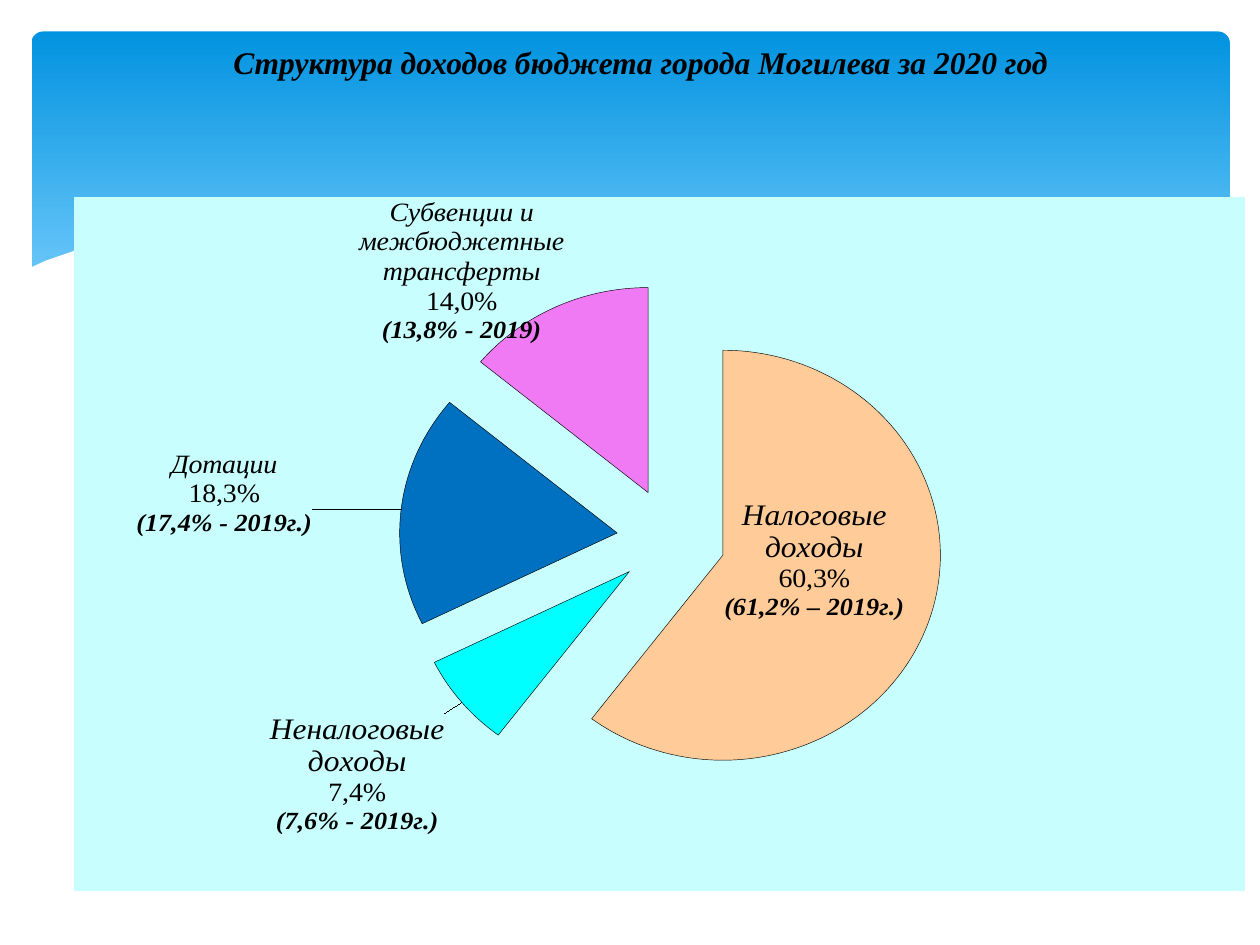
from dataclasses import dataclass

from lxml.etree import SubElement
from pptx import Presentation
from pptx.chart.data import CategoryChartData
from pptx.dml.color import RGBColor
from pptx.enum.chart import XL_CHART_TYPE, XL_LABEL_POSITION
from pptx.enum.shapes import MSO_SHAPE
from pptx.enum.text import MSO_ANCHOR, PP_ALIGN
from pptx.oxml import parse_xml
from pptx.oxml.ns import nsdecls, qn
from pptx.util import Inches, Pt


@dataclass(frozen=True)
class Theme:
    font: str = "Times New Roman"
    chart_font: str = "Calibri"
    ink: str = "000000"
    paper: str = "FFFFFF"
    banner_top: str = "0293E0"
    banner_bottom: str = "83D3FE"
    panel: str = "C8FEFD"
    title_size: int = 18
    large_size: int = 18
    label_size: int = 16
    previous_size: int = 15
    chart_size: int = 10
    line_width: float = 0.75
    slice_line_width: float = 0.25


@dataclass(frozen=True)
class Income:
    name: str
    share: float
    previous: str
    color: str
    name_size: int
    position: XL_LABEL_POSITION
    offset: tuple


THEME = Theme()
OUTSIDE = XL_LABEL_POSITION.OUTSIDE_END
INCOMES = [
    Income("Налоговые доходы", 0.603, "(61,2% – 2019г.)", "FFCC99",
           THEME.large_size, XL_LABEL_POSITION.CENTER, (-0.01, -0.04)),
    Income("Неналоговые доходы", 0.074, "(7,6% - 2019г.)", "00FFFF",
           THEME.large_size, OUTSIDE, (-0.01, 0.01)),
    Income("Дотации", 0.183, "(17,4% - 2019г.)", "0070C0",
           THEME.label_size, OUTSIDE, (-0.07, 0.04)),
    Income("Субвенции и межбюджетные трансферты", 0.14, "(13,8% - 2019)", "F07AF3",
           THEME.label_size, OUTSIDE, (0.01, 0.06)),
]
WAVE = [
    (0.23, 2.13), (0.36, 2.07), (0.59, 1.99), (0.95, 1.91), (1.46, 1.85),
    (1.93, 1.84), (2.5, 1.86), (3.16, 1.94), (3.91, 2.07), (4.47, 2.2),
    (5.29, 2.39), (6.03, 2.54), (6.88, 2.68), (7.61, 2.75), (8.09, 2.77),
    (8.63, 2.74), (9.1, 2.67), (9.5, 2.56), (9.77, 2.46), (9.77, 3.29), (0.23, 3.29),
]


class SlideBuilder:
    def __init__(self, slide, theme):
        self.slide = slide
        self.theme = theme

    def style_font(self, font, size, bold=False, italic=False):
        font.name = self.theme.font
        font.size = Pt(size)
        font.bold = bold
        font.italic = italic
        font.color.rgb = RGBColor.from_string(self.theme.ink)

    def draw_line(self, line, width):
        line.color.rgb = RGBColor.from_string(self.theme.ink)
        line.width = Pt(width)

    def add_banner(self, left, top, width, height):
        shape = self.slide.shapes.add_shape(
            MSO_SHAPE.ROUNDED_RECTANGLE, *map(Inches, (left, top, width, height)))
        shape.adjustments[0] = 0.034
        shape.shadow.inherit = False
        shape.line.fill.background()
        shape.fill.gradient()
        shape.fill.gradient_angle = 270
        stops = shape.fill.gradient_stops
        colors = (self.theme.banner_top, self.theme.banner_bottom)
        for stop, color, position in zip(stops, colors, (0, 0.9)):
            stop.color.rgb = RGBColor.from_string(color)
            stop.position = position

    def add_wave(self, points):
        start, *others = [(Inches(x), Inches(y)) for x, y in points]
        builder = self.slide.shapes.build_freeform(*start)
        builder.add_line_segments(others, close=True)
        shape = builder.convert_to_shape()
        shape.shadow.inherit = False
        shape.fill.solid()
        shape.fill.fore_color.rgb = RGBColor.from_string(self.theme.paper)
        shape.line.fill.background()

    def add_title(self, text, left, top, width, height):
        title = self.slide.shapes.title
        title.left, title.top, title.width, title.height = map(
            Inches, (left, top, width, height))
        frame = title.text_frame
        frame.text = text
        frame.word_wrap = True
        frame.vertical_anchor = MSO_ANCHOR.TOP
        paragraph = frame.paragraphs[0]
        paragraph.alignment = PP_ALIGN.CENTER
        self.style_font(paragraph.runs[0].font, self.theme.title_size, True, True)
        title.element.getparent().append(title.element)

    def add_pie(self, incomes, left, top, width, height):
        data = CategoryChartData(number_format="0.0%")
        data.categories = [income.name for income in incomes]
        data.add_series("Series 1", [income.share for income in incomes])
        chart = self.slide.shapes.add_chart(
            XL_CHART_TYPE.PIE, *map(Inches, (left, top, width, height)), data).chart
        chart.has_title = False
        chart.has_legend = False
        chart.font.name = self.theme.chart_font
        chart.font.size = Pt(self.theme.chart_size)
        chart.font.color.rgb = RGBColor.from_string(self.theme.ink)
        chart.plots[0].vary_by_categories = True
        series = chart.plots[0].series[0]
        self.draw_line(series.format.line, self.theme.line_width)
        self.style_labels(series.data_labels)
        for index, income in enumerate(incomes):
            point = series.points[index]
            point.format.fill.solid()
            point.format.fill.fore_color.rgb = RGBColor.from_string(income.color)
            self.draw_line(point.format.line, self.theme.slice_line_width)
            self.label_point(point.data_label, income)
        self.finish_chart(chart, series, incomes)

    def style_labels(self, labels):
        labels.show_value = True
        labels.show_category_name = True
        labels.show_percentage = False
        labels.number_format = "0.0%"
        labels.number_format_is_linked = False
        self.style_font(labels.font, self.theme.label_size, True)

    def label_point(self, label, income):
        frame = label.text_frame
        share = f"{income.share:.1%}".replace(".", ",")
        frame.text = "\n".join((income.name, share, income.previous))
        styles = ((income.name_size, False, True),
                  (self.theme.label_size, False, False),
                  (self.theme.previous_size, True, True))
        for paragraph, style in zip(frame.paragraphs, styles):
            self.style_font(paragraph.runs[0].font, *style)
        label.position = income.position

    def manual_layout(self, **values):
        layout = parse_xml(f"<c:layout {nsdecls('c')}><c:manualLayout/></c:layout>")
        for name, value in values.items():
            SubElement(layout[0], qn(f"c:{name}")).set("val", str(value))
        return layout

    def finish_chart(self, chart, series, incomes):
        root = chart._chartSpace
        plot_area = root.find(".//" + qn("c:plotArea"))
        for layout in plot_area.findall(qn("c:layout")):
            plot_area.remove(layout)
        plot_area.insert(0, self.manual_layout(
            layoutTarget="inner", xMode="edge", yMode="edge",
            x=0.085, y=0.123, w=0.85, h=0.74))
        for label, income in zip(root.iter(qn("c:dLbl")), incomes):
            for layout in label.findall(qn("c:layout")):
                label.remove(layout)
            x, y = income.offset
            label.insert(1, self.manual_layout(x=x, y=y))
        explosion = parse_xml(f'<c:explosion {nsdecls("c")} val="25"/>')
        series._element.find(qn("c:dPt")).addprevious(explosion)
        width = Pt(self.theme.line_width)
        fill = f'<a:solidFill><a:srgbClr val="{self.theme.panel}"/></a:solidFill>'
        root.find(qn("c:chart")).addnext(parse_xml(
            f'<c:spPr {nsdecls("c", "a")}>{fill}<a:ln w="{width}">{fill}</a:ln></c:spPr>'))


def main():
    presentation = Presentation()
    presentation.slide_width = Inches(10)
    presentation.slide_height = Inches(7.5)
    slide = presentation.slides.add_slide(presentation.slide_layouts[5])
    builder = SlideBuilder(slide, THEME)
    builder.add_banner(0.25, 0.25, 9.51, 2.7)
    builder.add_wave(WAVE)
    builder.add_pie(INCOMES, 0.59, 1.23, 9.29, 5.84)
    builder.add_title("Структура доходов бюджета города Могилева за 2020 год",
                      0.91, 0.29, 8.35, 0.4)
    presentation.save("out.pptx")


if __name__ == "__main__":
    main()
